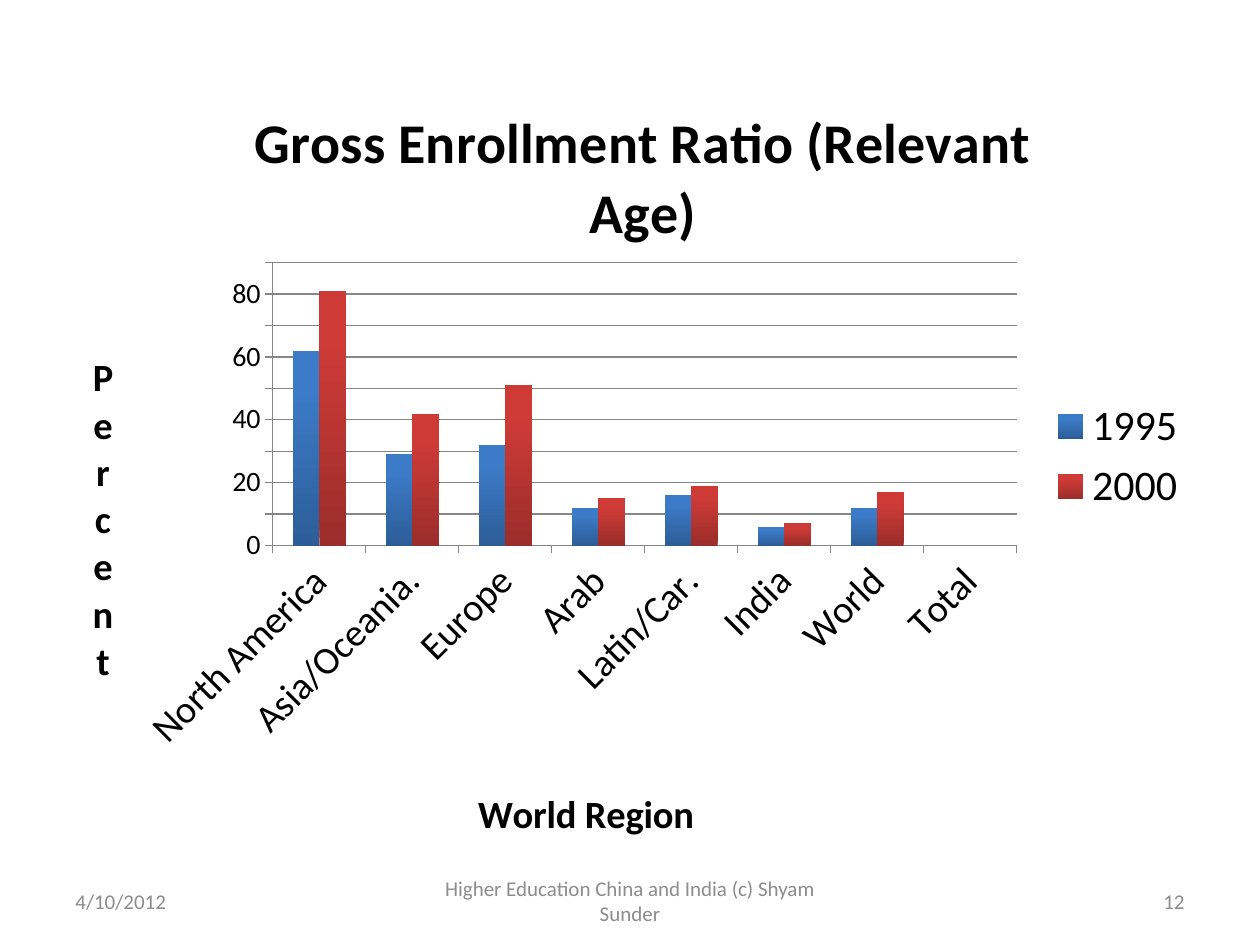
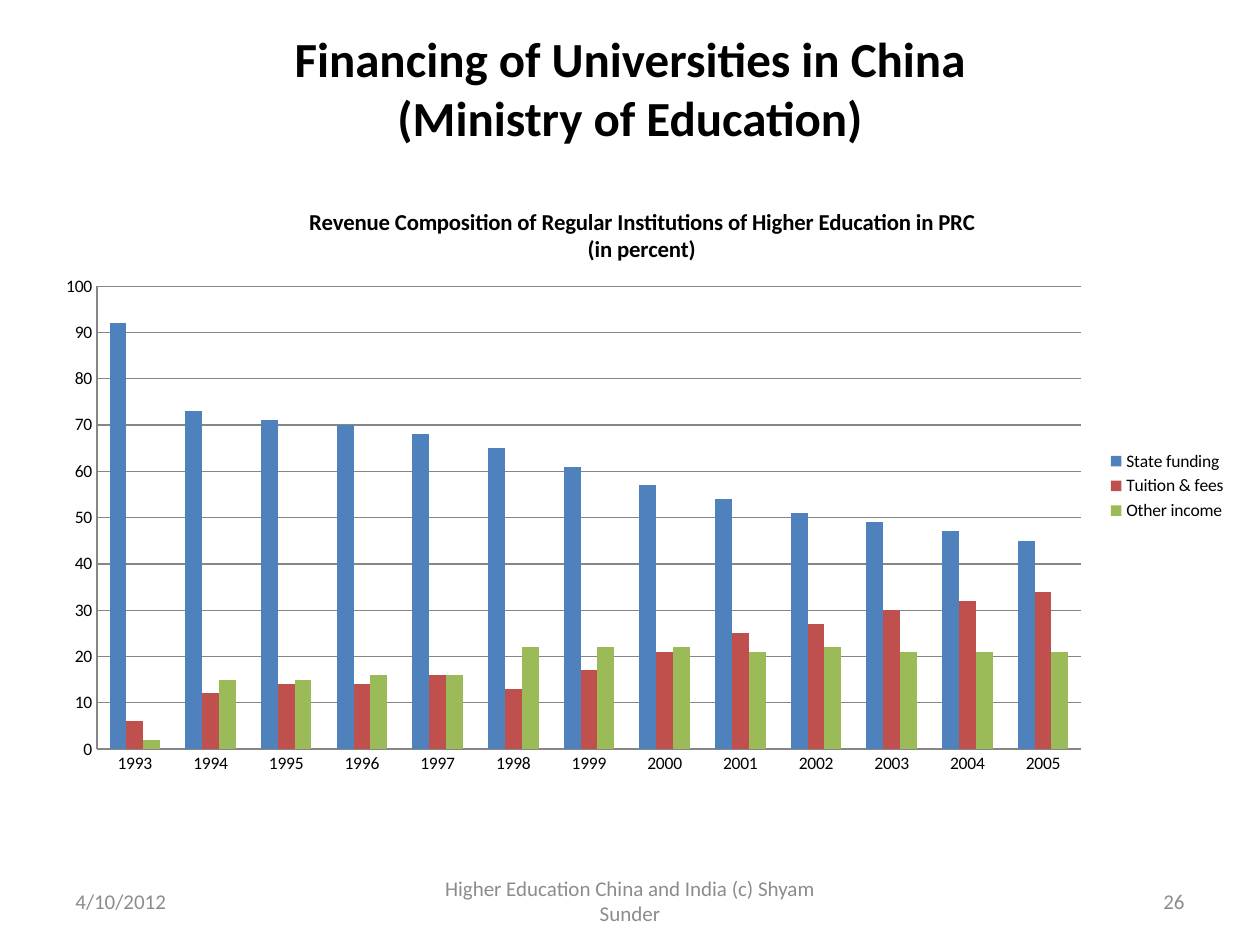
import pptx
import pptx.chart.data
import pptx.dml.color
import pptx.enum.chart
import pptx.enum.text
import pptx.oxml
import pptx.oxml.ns
import pptx.util

BLACK = pptx.dml.color.RGBColor(0x00, 0x00, 0x00)
GREY = pptx.dml.color.RGBColor(0x8C, 0x8C, 0x8C)
LINE_GREY = pptx.dml.color.RGBColor(0x86, 0x86, 0x86)
BLUE = pptx.dml.color.RGBColor(0x4F, 0x81, 0xBD)
RED = pptx.dml.color.RGBColor(0xC0, 0x50, 0x4D)
GREEN = pptx.dml.color.RGBColor(0x9B, 0xBB, 0x59)
DARK_BLUE = pptx.dml.color.RGBColor(0x2C, 0x5D, 0x98)
BRIGHT_BLUE = pptx.dml.color.RGBColor(0x3C, 0x7B, 0xC7)
DARK_RED = pptx.dml.color.RGBColor(0x9B, 0x2D, 0x2A)
BRIGHT_RED = pptx.dml.color.RGBColor(0xCE, 0x3B, 0x37)

FONT = "Calibri"
CELL = pptx.util.Inches(1) / 12  # the slide is a grid of 120 columns by 90 rows
ALIGN = pptx.enum.text.PP_ALIGN
TICK = pptx.enum.chart.XL_TICK_MARK


def grid(*lengths):
    return [pptx.util.Emu(round(length * CELL)) for length in lengths]


def style_font(font, size, color=BLACK, bold=False):
    font.name = FONT
    font.size = pptx.util.Pt(size)
    font.bold = bold
    font.color.rgb = color


def write(text_frame, text, size, color=BLACK, bold=False, align=ALIGN.CENTER):
    """Write one paragraph, with a line break at each newline."""
    paragraph = text_frame.paragraphs[0]
    paragraph.alignment = align
    for number, line in enumerate(text.split("\n")):
        if number:
            paragraph.add_line_break()
        run = paragraph.add_run()
        run.text = line
        style_font(run.font, size, color, bold)


def place(chart, part, left, top, width=None, height=None):
    """Fix a chart part at shares of the chart's size."""
    element = chart.element.xpath(part)[0]
    for old_layout in element.xpath("c:layout"):
        element.remove(old_layout)
    inner = '<c:layoutTarget val="inner"/>' if part.endswith("plotArea") else ""
    shares = {"x": left, "y": top, "w": width, "h": height}
    modes = "".join(f'<c:{key}Mode val="edge"/>' for key in "xy")
    values = "".join(f'<c:{key} val="{share}"/>'
                     for key, share in shares.items() if share is not None)
    layout = pptx.oxml.parse_xml(
        f'<c:layout {pptx.oxml.ns.nsdecls("c")}><c:manualLayout>'
        f'{inner}{modes}{values}</c:manualLayout></c:layout>')
    before = element.xpath("c:tx | c:legendPos")
    if before:
        before[0].addnext(layout)
    else:
        element.insert(0, layout)


def paint(fill, colors):
    """Fill with one colour, or with a gradient from bottom to top."""
    if len(colors) == 1:
        fill.solid()
        fill.fore_color.rgb = colors[0]
        return
    fill.gradient()
    fill.gradient_angle = 90
    for stop, color, position in zip(fill.gradient_stops, colors, (0, 0.8)):
        stop.color.rgb = color
        stop.position = position


class Deck:
    def __init__(self):
        self.presentation = pptx.Presentation()
        self.presentation.slide_width, self.presentation.slide_height = grid(120, 90)
        self.slide = None

    def new_slide(self, number):
        self.slide = self.presentation.slides.add_slide(
            self.presentation.slide_layouts[6])
        footers = (
            (6, 28, "4/10/2012", ALIGN.LEFT),
            (41, 38, "Higher Education China and India (c) Shyam Sunder", ALIGN.CENTER),
            (86, 28, str(number), ALIGN.RIGHT),
        )
        for column, columns, text, align in footers:
            self.text(text, (column, 83.4, columns, 4.8),
                      size=12, color=GREY, align=align)

    def text(self, text, box, **text_format):
        frame = self.slide.shapes.add_textbox(*grid(*box)).text_frame
        frame.word_wrap = True
        frame.vertical_anchor = pptx.enum.text.MSO_ANCHOR.MIDDLE
        write(frame, text, **text_format)

    def title(self, text):
        self.text(text, (6, 3.6, 108, 9.4), size=28, bold=True)

    def column_chart(self, box, title, title_size, categories, series, maximum,
                     tick=TICK.NONE, category_size=10, value_size=10, legend_size=10):
        """Series maps each name to its colours and values."""
        data = pptx.chart.data.CategoryChartData()
        data.categories = categories
        for name, (_, values) in series.items():
            data.add_series(name, values)
        chart = self.slide.shapes.add_chart(
            pptx.enum.chart.XL_CHART_TYPE.COLUMN_CLUSTERED, *grid(*box), data).chart
        style_font(chart.font, 10)
        chart.has_title = True
        write(chart.chart_title.text_frame, title, title_size, bold=True)
        chart.chart_title.include_in_layout = False

        chart.has_legend = True
        chart.legend.position = pptx.enum.chart.XL_LEGEND_POSITION.RIGHT
        chart.legend.include_in_layout = False
        style_font(chart.legend.font, legend_size)

        plot = chart.plots[0]
        plot.gap_width = 150
        plot.overlap = 0
        plot.vary_by_categories = False
        for column, (colors, _) in zip(plot.series, series.values()):
            column.invert_if_negative = False
            paint(column.format.fill, colors)

        value_axis = chart.value_axis
        value_axis.minimum_scale, value_axis.maximum_scale = 0, maximum
        value_axis.major_unit = 10
        value_axis.has_major_gridlines = True
        sizes = ((chart.category_axis, category_size), (value_axis, value_size))
        for axis, size in sizes:
            axis.major_tick_mark = tick
            axis.minor_tick_mark = TICK.NONE
            style_font(axis.tick_labels.font, size)
            axis.format.line.color.rgb = LINE_GREY
        value_axis.major_gridlines.format.line.color.rgb = LINE_GREY
        return chart


def add_enrollment(deck):
    deck.new_slide(12)
    chart = deck.column_chart(
        (6, 5, 108, 77), "Gross Enrollment Ratio (Relevant Age)", 32,
        ["North America", "Asia/Oceania.", "Europe", "Arab", "Latin/Car.",
         "India", "World", "Total"],
        {"1995": ((DARK_BLUE, BRIGHT_BLUE), (62, 29, 32, 12, 16, 6, 12, None)),
         "2000": ((DARK_RED, BRIGHT_RED), (81, 42, 51, 15, 19, 7, 17, None))},
        maximum=90, tick=TICK.OUTSIDE,
        category_size=22, value_size=16, legend_size=24)
    for axis, name in ((chart.category_axis, "World Region"),
                       (chart.value_axis, "Percent")):
        axis.has_title = True
        write(axis.axis_title.text_frame, name, 22, bold=True)
    label_body = chart.element.xpath(".//c:catAx/c:txPr/a:bodyPr")[0]
    label_body.set("rot", "-2700000")
    label_body.set("vert", "horz")
    percent_body = chart.element.xpath(".//c:valAx/c:title//a:bodyPr")[0]
    percent_body.set("rot", "0")
    percent_body.set("vert", "wordArtVert")
    place(chart, "c:chart/c:title", 0.16, 0.05)
    place(chart, "c:chart/c:plotArea", 0.185, 0.26, 0.656, 0.35)
    place(chart, "c:chart/c:legend", 0.87, 0.42, 0.12, 0.16)
    place(chart, ".//c:catAx/c:title", 0.36, 0.9)
    place(chart, ".//c:valAx/c:title", 0.02, 0.36)


def add_financing(deck):
    deck.new_slide(26)
    deck.title("Financing of Universities in China\n(Ministry of Education)")
    chart = deck.column_chart(
        (4, 17, 114, 58),
        "Revenue Composition of Regular Institutions of Higher Education in PRC\n"
        "(in percent)", 13,
        [str(year) for year in range(1993, 2006)],
        {"State funding": ((BLUE,), (92, 73, 71, 70, 68, 65, 61, 57, 54, 51, 49, 47, 45)),
         "Tuition & fees": ((RED,), (6, 12, 14, 14, 16, 13, 17, 21, 25, 27, 30, 32, 34)),
         "Other income": ((GREEN,), (2, 15, 15, 16, 16, 22, 22, 22, 21, 22, 21, 21, 21))},
        maximum=100)
    place(chart, "c:chart/c:title", 0.22, 0.04)
    place(chart, "c:chart/c:plotArea", 0.046, 0.177, 0.822, 0.76)
    place(chart, "c:chart/c:legend", 0.89, 0.44, 0.1, 0.13)


def main():
    deck = Deck()
    add_enrollment(deck)
    add_financing(deck)
    deck.presentation.save("out.pptx")


if __name__ == "__main__":
    main()
